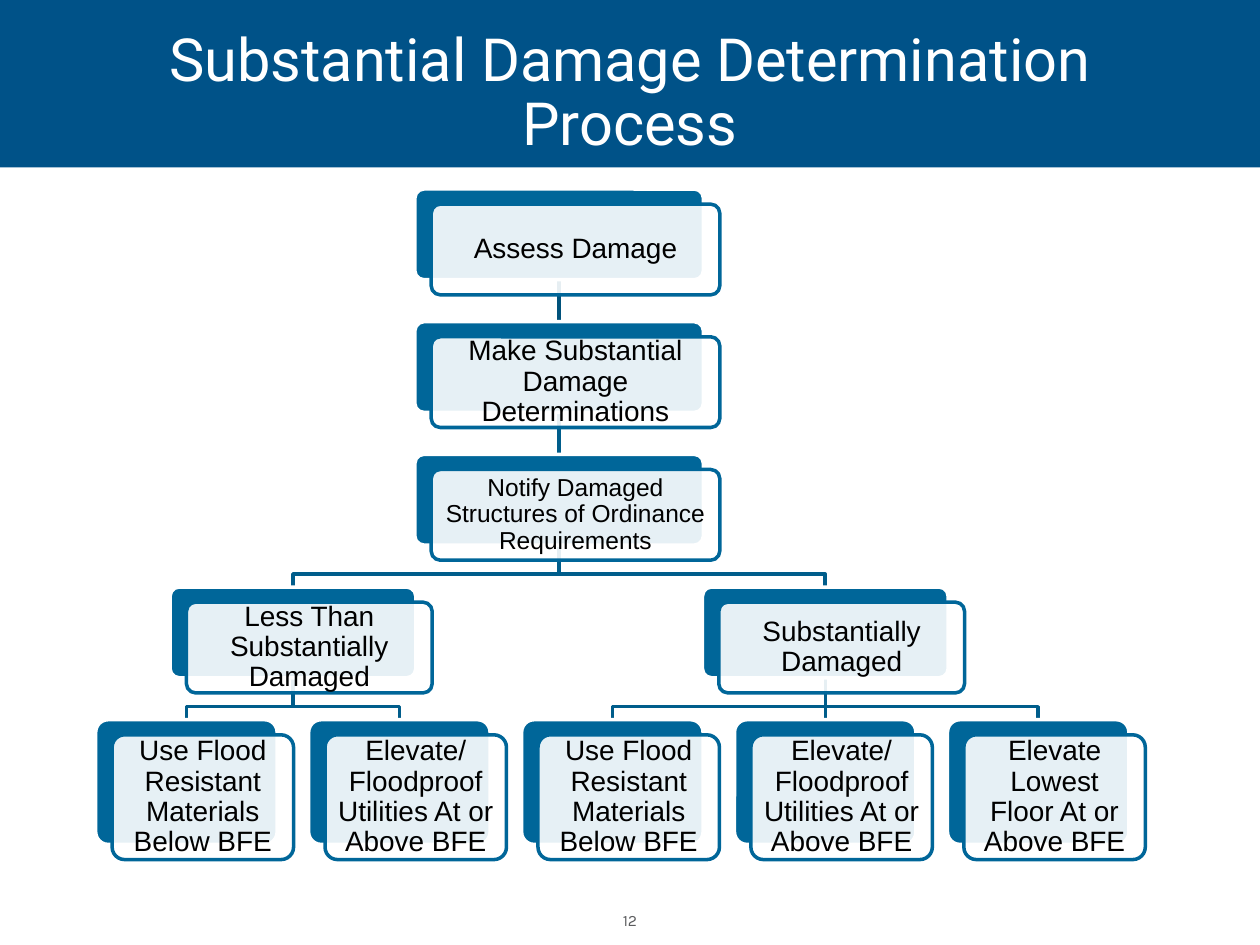
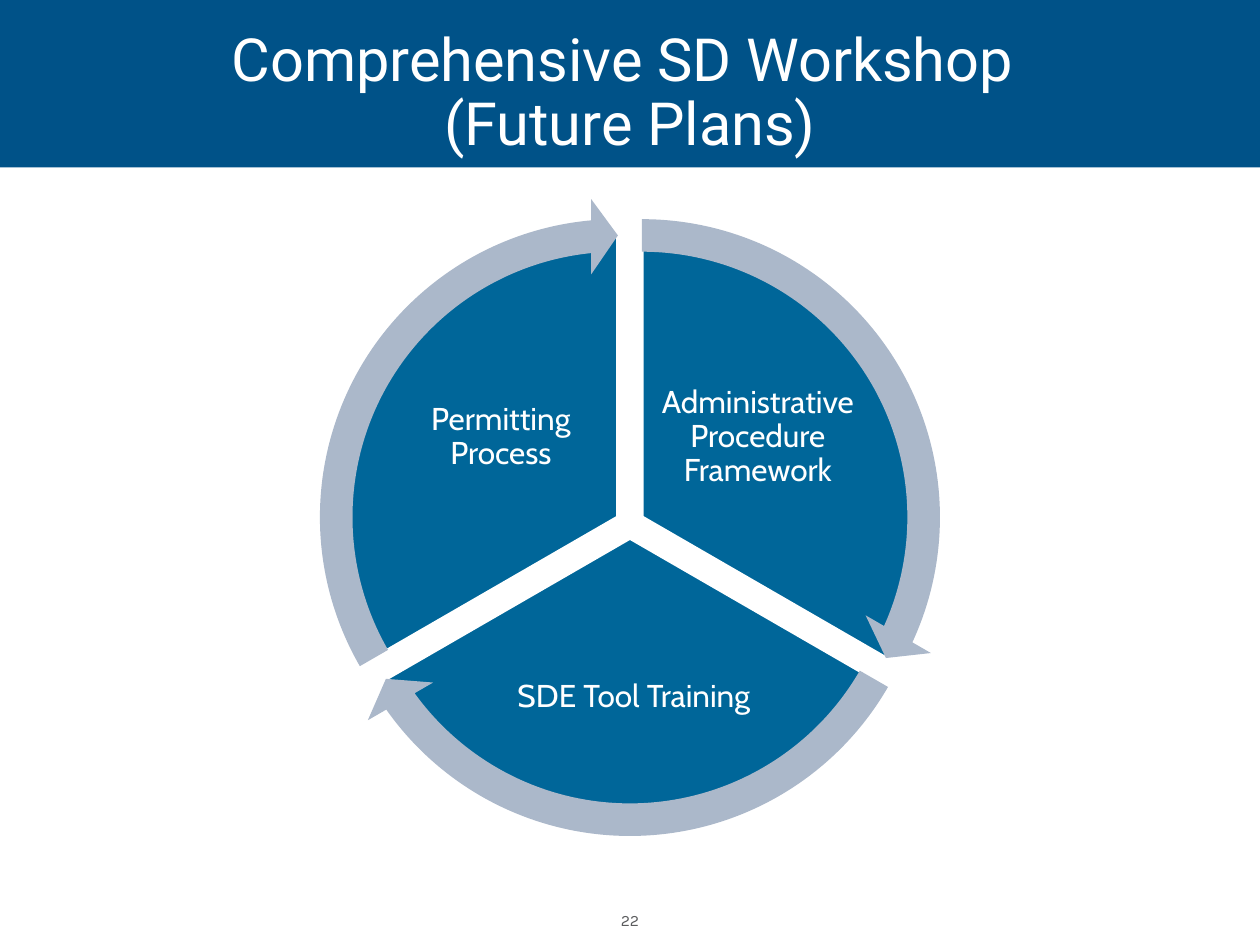
from dataclasses import dataclass, field
from math import cos, radians, sin

from lxml.etree import SubElement
from pptx import Presentation
from pptx.dml.color import RGBColor
from pptx.enum.shapes import MSO_CONNECTOR, MSO_SHAPE
from pptx.enum.text import MSO_ANCHOR, MSO_AUTO_SIZE, PP_ALIGN
from pptx.oxml.ns import qn
from pptx.util import Inches, Pt


@dataclass
class Step:
    """One card of the flow chart, with the cards it leads to."""
    text: str
    children: list = field(default_factory=list)
    size: int = 16
    row: int = 0
    center: float = 0
    back: object = None


FLOOD_RESISTANT = "Use Flood Resistant Materials Below BFE"
UTILITIES = "Elevate/ Floodproof Utilities At or Above BFE"
PROCESS = Step("Assess Damage", [
    Step("Make Substantial Damage Determinations", [
        Step("Notify Damaged Structures of Ordinance Requirements", [
            Step("Less Than Substantially Damaged", [
                Step(FLOOD_RESISTANT), Step(UTILITIES)]),
            Step("Substantially Damaged", [
                Step(FLOOD_RESISTANT), Step(UTILITIES),
                Step("Elevate Lowest Floor At or Above BFE")]),
        ], size=14)])])

# text, start angle in degrees, text box (left, top, width, height)
WORKSHOP_PARTS = [
    ("Administrative Procedure Framework", 270, (5.21, 2.8, 1.61, 1.34)),
    ("SDE Tool Training", 30, (3.82, 4.94, 2.42, 1.18)),
    ("Permitting Process", 150, (3.17, 2.8, 1.61, 1.34)),
]

WHITE, BLACK, GRAY = "FFFFFF", "000000", "5B5C5E"
BAND_BLUE, CARD_BLUE, ARROW_GRAY = "005288", "006699", "ABB8CA"
LINK_BLUE, FIRST_LINK_BLUE = "005D8B", "00527B"

SLIDE_WIDTH, SLIDE_HEIGHT = 10, 7.5
BAND_HEIGHT = 1.33

# Flow chart grid: columns hold the last row's cards
FIRST_CENTER, COLUMN_STEP = 1.48, 1.69
FIRST_TOP, ROW_STEP = 1.5, 1.053
CARD_SIZES = [(2.29, 0.72)] * 3 + [(1.95, 0.72), (1.44, 0.99)]
FRONT_SHIFT_X, FRONT_SHIFT_Y = 0.13, 0.12
BEND_DROP = 0.23

# Cycle
CYCLE_CENTER = (5, 4.16)
PIE_SIZE, RING_SIZE, SLICE_SHIFT = 4.51, 5.07, 0.11
SWEEP, ARROWHEAD_ANGLE = 120, 5.46
ANGLE_UNIT = 0.6  # adjustment value of one degree


def color(hex_string):
    return RGBColor.from_string(hex_string)


def write(shape, text, *, font, size, ink, inset=None, anchor=MSO_ANCHOR.MIDDLE,
          spacing=0.9):
    frame = shape.text_frame
    frame.word_wrap = True
    frame.auto_size = MSO_AUTO_SIZE.NONE
    frame.vertical_anchor = anchor
    if inset is not None:
        frame.margin_left = frame.margin_right = Inches(inset)
        frame.margin_top = frame.margin_bottom = Inches(inset)
    paragraph = frame.paragraphs[0]
    paragraph.text = text
    paragraph.alignment = PP_ALIGN.CENTER
    paragraph.line_spacing = spacing
    for run in paragraph.runs:
        run.font.name = font
        run.font.size = Pt(size)
        run.font.color.rgb = color(ink)


def add_text(slide, box, text, **text_format):
    write(slide.shapes.add_textbox(*map(Inches, box)), text, **text_format)


def add_shape(slide, kind, box, fill, line=None, adjustments=(), opacity=None):
    shape = slide.shapes.add_shape(kind, *map(Inches, box))
    shape.shadow.inherit = False
    shape.fill.solid()
    shape.fill.fore_color.rgb = color(fill)
    if opacity is not None:
        fill_color = shape.element.spPr.find(qn("a:solidFill"))[0]
        SubElement(fill_color, qn("a:alpha"), val=str(opacity * 1000))
    if line:
        shape.line.color.rgb = color(line)
        shape.line.width = Pt(2)
    else:
        shape.line.fill.background()
    for index, value in enumerate(adjustments):
        shape.adjustments[index] = value
    return shape


def style_layout(layout, slide):
    """Give the layout its title position and the blue band behind it."""
    title = layout.placeholders[0]
    title.left, title.top, title.width, title.height = map(Inches, (0.5, 0.05, 9, 1.26))
    band = add_shape(slide, MSO_SHAPE.RECTANGLE, (0, 0, SLIDE_WIDTH, BAND_HEIGHT), BAND_BLUE)
    band.element.nvSpPr.cNvPr.set("id", "20")
    layout.shapes.element.insert(2, band.element)


def add_slide(presentation, title, number):
    layout = presentation.slide_layouts[5]
    slide = presentation.slides.add_slide(layout)
    if len(presentation.slides) == 1:
        style_layout(layout, slide)
    write(slide.shapes.title, title, font="Roboto", size=34, ink=WHITE,
          anchor=MSO_ANCHOR.BOTTOM)
    add_text(slide, (SLIDE_WIDTH * 5 / 12, 7.23, SLIDE_WIDTH / 6, 0.15), number,
             font="Karla", size=9, ink=GRAY, inset=0, anchor=MSO_ANCHOR.TOP, spacing=1)
    return slide


def place(step, row=0, leaves_before=0):
    """Set rows and centres below a step; return the leaves counted so far."""
    step.row = row
    if not step.children:
        step.center = FIRST_CENTER + COLUMN_STEP * leaves_before
        return leaves_before + 1
    for child in step.children:
        leaves_before = place(child, row + 1, leaves_before)
    step.center = sum(child.center for child in step.children) / len(step.children)
    return leaves_before


def walk(step):
    yield step
    for child in step.children:
        yield from walk(child)


def row_top(row):
    return FIRST_TOP + ROW_STEP * row


def add_link(slide, parent, child):
    """Draw a link; return it if it is straight and still to be joined."""
    start_y = row_top(parent.row) + CARD_SIZES[parent.row][1]
    bend_y, end_y = start_y + BEND_DROP, row_top(child.row)
    points = [(Inches(x), Inches(y)) for x, y in (
        (parent.center, start_y), (parent.center, bend_y),
        (child.center, bend_y), (child.center, end_y))]
    straight = abs(parent.center - child.center) < 0.01
    if straight:
        link = slide.shapes.add_connector(MSO_CONNECTOR.STRAIGHT, *points[0], *points[-1])
        SubElement(link.element.spPr, qn("a:effectLst"))
    else:
        builder = slide.shapes.build_freeform(*points[0], scale=1.0)
        builder.add_line_segments(points[1:], close=False)
        link = builder.convert_to_shape()
        link.shadow.inherit = False
        link.fill.background()
    link.line.color.rgb = color(LINK_BLUE if parent.row else FIRST_LINK_BLUE)
    link.line.width = Pt(2)
    return link if straight else None


def add_card(slide, step):
    width, height = CARD_SIZES[step.row]
    left, top = step.center - width / 2, row_top(step.row)
    step.back = add_shape(slide, MSO_SHAPE.ROUNDED_RECTANGLE, (left, top, width, height),
                          CARD_BLUE, WHITE, [0.1])
    front = add_shape(slide, MSO_SHAPE.ROUNDED_RECTANGLE,
                      (left + FRONT_SHIFT_X, top + FRONT_SHIFT_Y, width, height),
                      WHITE, CARD_BLUE, [0.1], opacity=90)
    write(front, step.text, font="Arial", size=step.size, ink=BLACK,
          inset=0.07 if step.size == 16 else 0.06)


def add_process(slide):
    place(PROCESS)
    steps = list(walk(PROCESS))
    links = [(add_link(slide, parent, child), parent, child)
             for parent in steps for child in parent.children]
    for step in steps:
        add_card(slide, step)
    for link, parent, child in links:
        if link is not None:
            link.begin_connect(parent.back, 2)
            link.end_connect(child.back, 0)


def slice_box(start, size):
    """Square around the cycle's centre, pushed out along the slice's middle."""
    middle = radians(start + SWEEP / 2)
    x = CYCLE_CENTER[0] + SLICE_SHIFT * cos(middle)
    y = CYCLE_CENTER[1] + SLICE_SHIFT * sin(middle)
    return x - size / 2, y - size / 2, size, size


def add_cycle(slide):
    for text, start, text_box in WORKSHOP_PARTS:
        end = (start + SWEEP) % 360
        add_shape(slide, MSO_SHAPE.PIE, slice_box(start, PIE_SIZE), CARD_BLUE, WHITE,
                  [start * ANGLE_UNIT, end * ANGLE_UNIT])
        add_text(slide, text_box, text, font="Cabin", size=18, ink=WHITE, inset=0.03)
    for _, start, _ in WORKSHOP_PARTS:
        arrow_end = (start + SWEEP) % 360 - ARROWHEAD_ANGLE
        add_shape(slide, MSO_SHAPE.CIRCULAR_ARROW, slice_box(start, RING_SIZE), ARROW_GRAY,
                  adjustments=[0.051, 3.275, arrow_end * ANGLE_UNIT,
                               start * ANGLE_UNIT, 0.059])


def main():
    presentation = Presentation()
    presentation.slide_width = Inches(SLIDE_WIDTH)
    presentation.slide_height = Inches(SLIDE_HEIGHT)
    add_process(add_slide(presentation, "Substantial Damage Determination Process", "12"))
    add_cycle(add_slide(presentation, "Comprehensive SD Workshop \v(Future Plans)", "22"))
    presentation.save("out.pptx")


if __name__ == "__main__":
    main()
